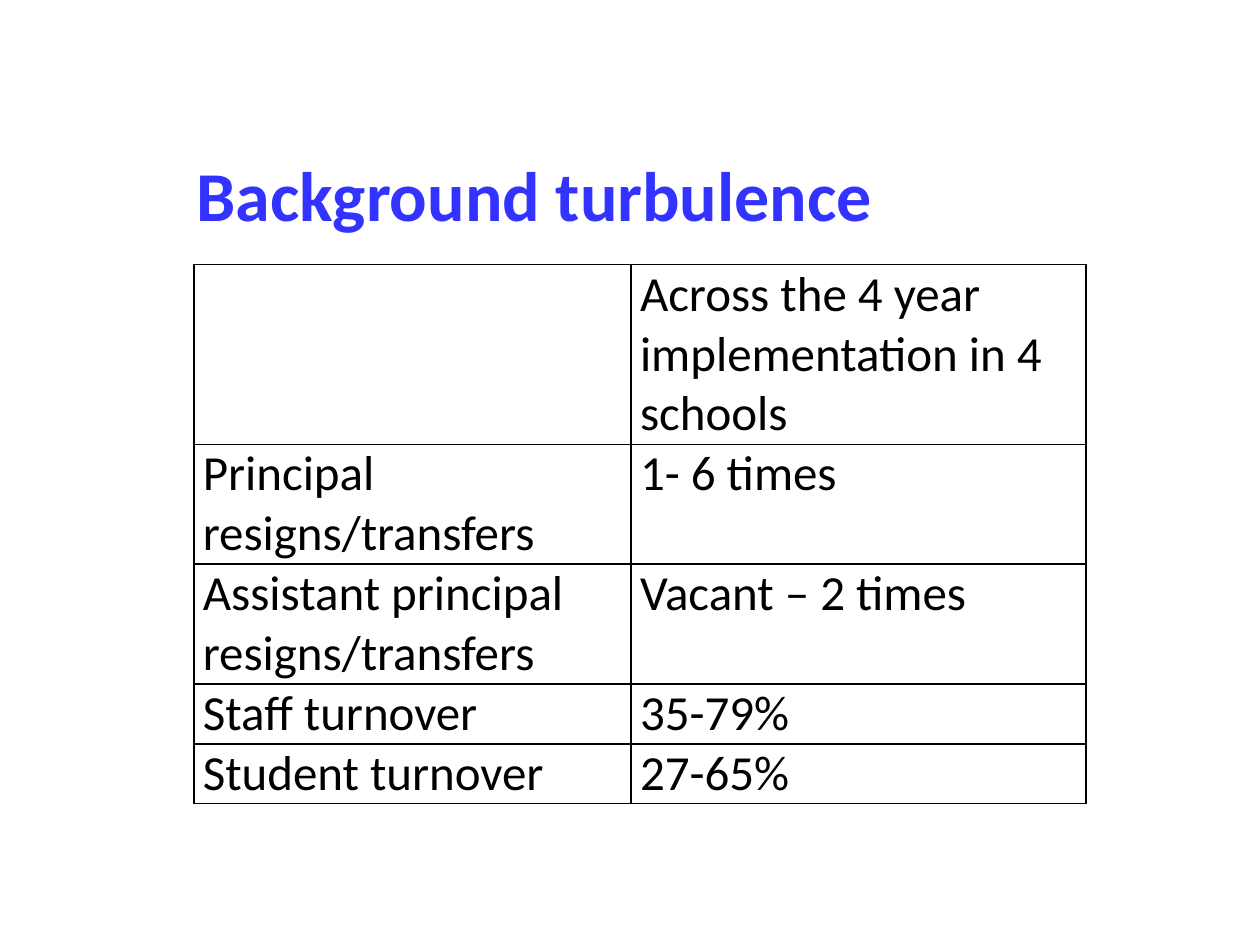
from dataclasses import dataclass

from lxml import etree
from pptx import Presentation
from pptx.dml.color import RGBColor
from pptx.enum.text import MSO_AUTO_SIZE
from pptx.oxml.ns import qn
from pptx.slide import Slide
from pptx.table import Table, _Cell
from pptx.text.text import TextFrame
from pptx.util import Inches, Pt

FIT_SHAPE = MSO_AUTO_SIZE.SHAPE_TO_FIT_TEXT
BLACK = RGBColor(0x00, 0x00, 0x00)
BLUE = RGBColor(0x33, 0x33, 0xFF)

TITLE_FONT = {"name": "Calibri", "size": Pt(40), "bold": True}
BODY_FONT = {"name": "Calibri", "size": Pt(28), "bold": False}
CELL_MARGINS = {
    "margin_left": Inches(0.07),
    "margin_right": Inches(0.07),
    "margin_top": 0,
    "margin_bottom": 0,
}
PLAIN_TABLE = {"first_row": False, "horz_banding": False}
COLUMN_WIDTHS = (3.47, 3.61)
LINE_HEIGHT = 0.47


@dataclass(frozen=True)
class Measure:
    label: str
    finding: str
    lines: int


MEASURES = (
    Measure("", "Across the 4 year implementation in 4 schools", 3),
    Measure("Principal resigns/transfers", "1- 6 times", 2),
    Measure("Assistant principal resigns/transfers", "Vacant – 2 times", 2),
    Measure("Staff turnover", "35-79%", 1),
    Measure("Student turnover", "27-65%", 1),
)


def apply_format(target: object, values: dict) -> None:
    for attribute, value in values.items():
        setattr(target, attribute, value)


def write(frame: TextFrame, wording: str, font: dict, color: RGBColor) -> None:
    paragraph = frame.paragraphs[0]
    apply_format(paragraph.font, font)
    if wording:
        run = paragraph.add_run()
        run.text = wording
        apply_format(run.font, font)
        run.font.color.rgb = color


def add_borders(cell: _Cell, color: RGBColor) -> None:
    properties = cell._tc.get_or_add_tcPr()
    for position, side in enumerate(("lnL", "lnR", "lnT", "lnB")):
        border = etree.Element(qn(f"a:{side}"), w=str(Pt(1)))
        fill = etree.SubElement(border, qn("a:solidFill"))
        etree.SubElement(fill, qn("a:srgbClr"), val=str(color))
        properties.insert(position, border)


def fill_table(table: Table) -> None:
    apply_format(table, PLAIN_TABLE)
    for column, width in zip(table.columns, COLUMN_WIDTHS):
        column.width = Inches(width)
    for row, measure in zip(table.rows, MEASURES):
        row.height = Inches(LINE_HEIGHT * measure.lines)
        for cell, wording in zip(row.cells, (measure.label, measure.finding)):
            apply_format(cell, CELL_MARGINS)
            cell.fill.background()
            add_borders(cell, BLACK)
            write(cell.text_frame, wording, BODY_FONT, BLACK)


def add_turbulence_table(slide: Slide) -> None:
    height = LINE_HEIGHT * sum(measure.lines for measure in MEASURES)
    frame = slide.shapes.add_table(
        len(MEASURES), len(COLUMN_WIDTHS),
        Inches(1.54), Inches(2.1), Inches(sum(COLUMN_WIDTHS)), Inches(height),
    )
    fill_table(frame.table)


def add_title(slide: Slide) -> None:
    title = slide.shapes.add_textbox(
        Inches(1.46), Inches(1.15), Inches(5.71), Inches(0.77)
    )
    apply_format(title.text_frame, {"word_wrap": True, "auto_size": FIT_SHAPE})
    write(title.text_frame, "Background turbulence", TITLE_FONT, BLUE)


def main() -> None:
    presentation = Presentation()
    apply_format(
        presentation, {"slide_width": Inches(10), "slide_height": Inches(7.5)}
    )
    slide = presentation.slides.add_slide(presentation.slide_layouts[6])
    add_turbulence_table(slide)
    add_title(slide)
    presentation.save("out.pptx")


if __name__ == "__main__":
    main()
